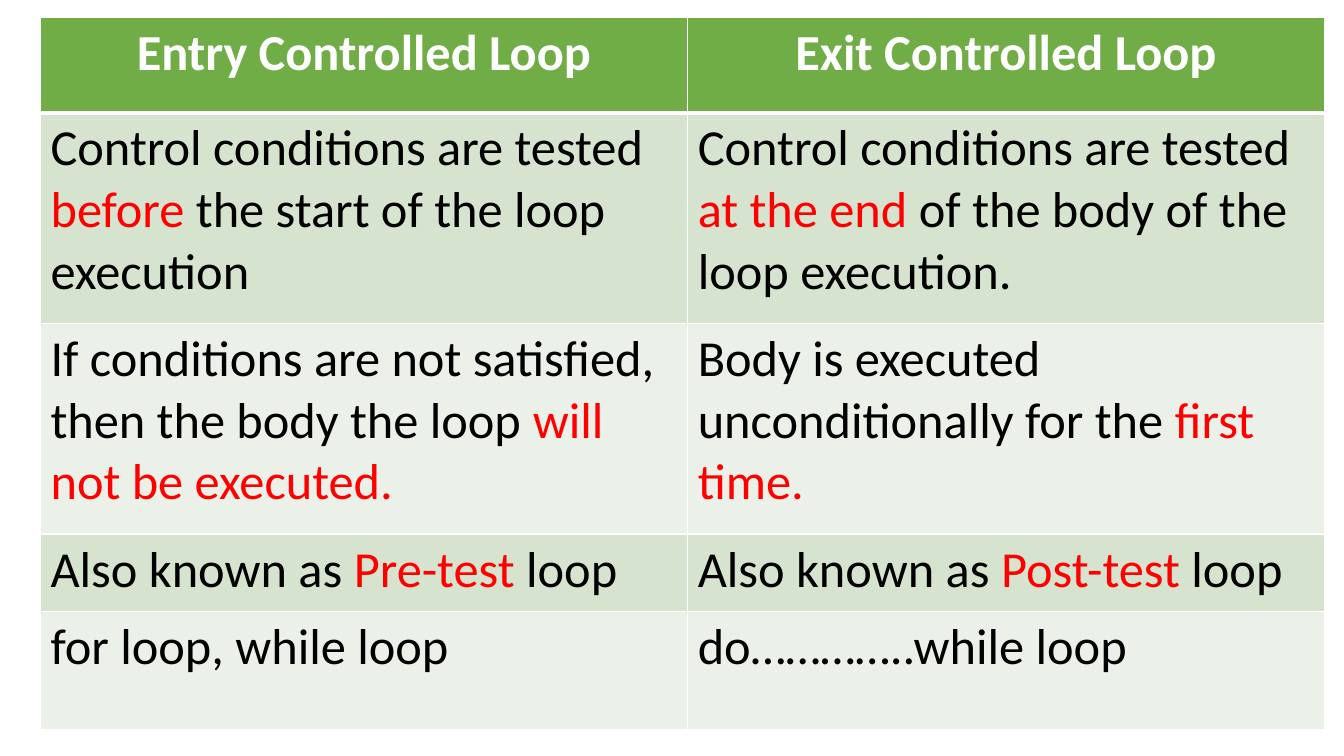
from dataclasses import dataclass

from lxml.etree import SubElement
from pptx import Presentation
from pptx.dml.color import RGBColor
from pptx.enum.text import PP_ALIGN
from pptx.oxml.ns import qn
from pptx.util import Cm, Pt

WHITE, BLACK, RED = "FFFFFF", "000000", "FF0000"
GREEN, SAGE, PALE = "70AD47", "D5E3CF", "EBF1E9"


@dataclass
class Part:
    text: str
    ink: str = BLACK


@dataclass
class Row:
    high: float
    fill: str
    left: list[Part]
    right: list[Part]
    head: bool = False


# Content
WIDTHS = [16.31, 16.05]
ROWS = [
    Row(2.41, GREEN, [Part("Entry Controlled Loop", WHITE)],
        [Part("Exit Controlled Loop", WHITE)], head=True),
    Row(5.31, SAGE,
        [Part("Control conditions are tested "), Part("before", RED),
         Part(" the start of the loop execution")],
        [Part("Control conditions are tested "), Part("at the end", RED),
         Part(" of the body of the loop execution.")]),
    Row(5.31, PALE,
        [Part("If conditions are not satisfied, then the body the loop "),
         Part("will not be executed.", RED)],
        [Part("Body is executed unconditionally for the "),
         Part("first time.", RED)]),
    Row(1.96, SAGE,
        [Part("Also known as "), Part("Pre-test", RED), Part(" loop")],
        [Part("Also known as "), Part("Post-test", RED), Part(" loop")]),
    Row(2.97, PALE, [Part("for loop, while loop")],
        [Part("do…………..while loop")]),
]


def color(code: str) -> RGBColor:
    return RGBColor.from_string(code)


def edge(cell, top: float, base: float) -> None:
    """Draw white borders, with widths in points."""
    props = cell._tc.get_or_add_tcPr()
    for side, wide in (("L", 1), ("R", 1), ("T", top), ("B", base)):
        line = SubElement(props, qn(f"a:ln{side}"), w=str(Pt(wide)))
        fill = SubElement(line, qn("a:solidFill"))
        SubElement(fill, qn("a:srgbClr"), val=WHITE)


def write(cell, parts: list[Part], head: bool) -> None:
    para = cell.text_frame.paragraphs[0]
    para.alignment = PP_ALIGN.CENTER if head else PP_ALIGN.LEFT
    for part in parts:
        run = para.add_run()
        run.text = part.text
        font = run.font
        font.name, font.size, font.bold = "Calibri", Pt(36), head
        font.color.rgb = color(part.ink)


def main() -> None:
    deck = Presentation()
    deck.slide_width, deck.slide_height = Cm(33.87), Cm(19.05)
    slide = deck.slides.add_slide(deck.slide_layouts[6])

    # Table grid
    table = slide.shapes.add_table(
        len(ROWS), len(WIDTHS), Cm(1.02), Cm(0.43),
        Cm(sum(WIDTHS)), Cm(sum(row.high for row in ROWS))).table
    for col, wide in zip(table.columns, WIDTHS):
        col.width = Cm(wide)

    # Cells, with a thick rule under the header
    for i, row in enumerate(ROWS):
        table.rows[i].height = Cm(row.high)
        for j, parts in enumerate((row.left, row.right)):
            cell = table.cell(i, j)
            edge(cell, 3 if i == 1 else 1, 3 if row.head else 1)
            cell.fill.solid()
            cell.fill.fore_color.rgb = color(row.fill)
            write(cell, parts, row.head)

    deck.save("out.pptx")


if __name__ == "__main__":
    main()
